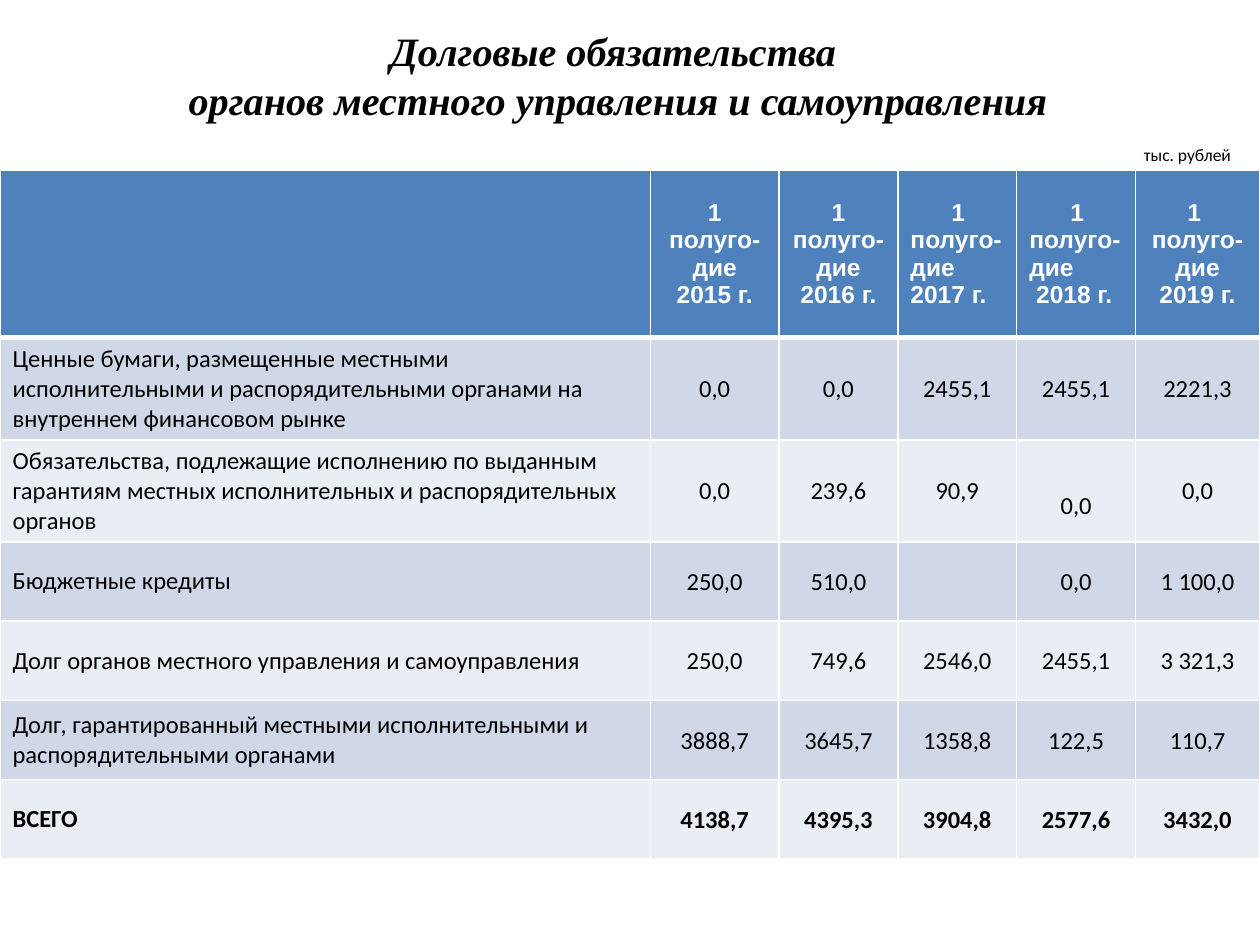
from dataclasses import dataclass
from typing import Any

from lxml.etree import SubElement
from pptx import Presentation
from pptx.dml.color import RGBColor
from pptx.enum.text import MSO_ANCHOR, PP_ALIGN
from pptx.oxml import parse_xml
from pptx.oxml.ns import nsdecls, qn
from pptx.util import Pt


@dataclass(frozen=True)
class Theme:
    header_fill: str = "4F81BD"
    band_fills: tuple[str, str] = ("D0D8E8", "E9EDF4")
    white: str = "FFFFFF"
    black: str = "000000"
    title_size: float = 23
    table_size: float = 14
    unit_size: float = 10
    body_font: str = "Calibri"
    header_font: str = "Arial"
    title_font: str = "Times New Roman"


@dataclass(frozen=True)
class Line:
    text: str
    indent: float = 0


@dataclass(frozen=True)
class Header:
    lines: tuple[Line, ...]
    align: PP_ALIGN = PP_ALIGN.CENTER


@dataclass(frozen=True)
class DebtRow:
    label: str
    values: tuple[str, ...]
    height: float
    tight: bool = True
    bold: bool = False


THEME = Theme()
STANDARD_MARGINS = (7.2, 3.6, 7.2, 3.6)
TIGHT_MARGINS = (0.72, 0.72, 0.72, 0)
LOWERED_MARGINS = (7.2, 20.6, 7.2, 3.6)
LOWERED_CELL = (2, 4)
COLUMN_WIDTHS = (371.6, 73.6, 67.9, 67.9, 67.9, 70.9)
HEADER_HEIGHT = 95.8
HALF_YEAR = "1 полуго-дие"

HEADERS = (
    Header(()),
    Header((Line(HALF_YEAR), Line("2015 г."))),
    Header((Line(HALF_YEAR), Line("2016 г."))),
    Header((Line(HALF_YEAR, 23.4), Line("2017 г.")), PP_ALIGN.LEFT),
    Header((Line(HALF_YEAR, 23.4), Line("2018 г.", 3.9)), PP_ALIGN.LEFT),
    Header((Line("1 "), Line("полуго-дие"), Line("2019 г."))),
)

DEBT_ROWS = (
    DebtRow("Ценные бумаги, размещенные местными исполнительными и "
            "распорядительными органами на внутреннем финансовом рынке",
            ("0,0", "0,0", "2455,1", "2455,1", "2221,3"), 57.6, tight=False),
    DebtRow("Обязательства, подлежащие исполнению по выданным гарантиям "
            "местных исполнительных и распорядительных органов",
            ("0,0", "239,6", "90,9", "0,0", "0,0"), 57.6, tight=False),
    DebtRow("Бюджетные кредиты",
            ("250,0", "510,0", "", "0,0", "1 100,0"), 45.3),
    DebtRow("Долг органов местного управления и самоуправления",
            ("250,0", "749,6", "2546,0", "2455,1", "3 321,3"), 45.3),
    DebtRow("Долг, гарантированный местными исполнительными и распорядительными органами",
            ("3888,7", "3645,7", "1358,8", "122,5", "110,7"), 45.3),
    DebtRow("ВСЕГО",
            ("4138,7", "4395,3", "3904,8", "2577,6", "3432,0"), 45.3, bold=True),
)


def font_format(name: str, size: float, **extra: Any) -> dict[str, Any]:
    return {"name": name, "size": Pt(size), **extra}


def write_lines(text_frame: Any, lines: tuple[Line, ...], align: PP_ALIGN,
                values: dict[str, Any], color: str) -> None:
    for index, line in enumerate(lines):
        paragraph = text_frame.paragraphs[0] if index == 0 else text_frame.add_paragraph()
        paragraph.text = line.text
        paragraph.alignment = align
        if line.indent:
            paragraph._p.get_or_add_pPr().set("indent", str(Pt(line.indent)))
        for run in paragraph.runs:
            for name, value in values.items():
                setattr(run.font, name, value)
            run.font.color.rgb = RGBColor.from_string(color)


def add_borders(cell: Any, bottom_width: float) -> None:
    properties = cell._tc.get_or_add_tcPr()
    widths = {"lnL": 1, "lnR": 1, "lnT": 1, "lnB": bottom_width}
    for index, (side, width) in enumerate(widths.items()):
        border = parse_xml(
            f'<a:{side} {nsdecls("a")} w="{Pt(width)}"><a:solidFill>'
            f'<a:srgbClr val="{THEME.white}"/></a:solidFill></a:{side}>')
        properties.insert(index, border)


def style_cell(cell: Any, fill: str, margins: tuple[float, ...], bottom_width: float = 1) -> None:
    cell.fill.solid()
    cell.fill.fore_color.rgb = RGBColor.from_string(fill)
    cell.vertical_anchor = MSO_ANCHOR.MIDDLE
    for side, margin in zip(("left", "top", "right", "bottom"), margins):
        setattr(cell, f"margin_{side}", Pt(margin))
    add_borders(cell, bottom_width)


def add_debt_table(slide: Any) -> None:
    heights = (HEADER_HEIGHT, *(row.height for row in DEBT_ROWS))
    table = slide.shapes.add_table(
        len(heights), len(COLUMN_WIDTHS), Pt(0), Pt(97.2),
        Pt(sum(COLUMN_WIDTHS)), Pt(sum(heights))).table
    for column, width in zip(table.columns, COLUMN_WIDTHS):
        column.width = Pt(width)
    for row, height in zip(table.rows, heights):
        row.height = Pt(height)

    header_format = font_format(THEME.header_font, THEME.table_size, bold=True)
    for column_index, header in enumerate(HEADERS):
        cell = table.cell(0, column_index)
        style_cell(cell, THEME.header_fill, STANDARD_MARGINS, 3)
        write_lines(cell.text_frame, header.lines, header.align, header_format, THEME.white)

    for row_index, row in enumerate(DEBT_ROWS, start=1):
        fill = THEME.band_fills[(row_index - 1) % 2]
        body_format = font_format(THEME.body_font, THEME.table_size, bold=row.bold)
        for column_index, text in enumerate((row.label, *row.values)):
            cell = table.cell(row_index, column_index)
            is_value = column_index > 0
            margins = TIGHT_MARGINS if row.tight and is_value else STANDARD_MARGINS
            if (row_index, column_index) == LOWERED_CELL:
                margins = LOWERED_MARGINS
            style_cell(cell, fill, margins)
            align = PP_ALIGN.CENTER if is_value else PP_ALIGN.LEFT
            write_lines(cell.text_frame, (Line(text),), align, body_format, THEME.black)


def add_text(slide: Any, box: tuple[float, ...], text: str, align: PP_ALIGN,
             anchor: MSO_ANCHOR, values: dict[str, Any], wrap: bool) -> Any:
    shape = slide.shapes.add_textbox(*(Pt(length) for length in box))
    shape.text_frame.word_wrap = wrap
    shape.text_frame.vertical_anchor = anchor
    write_lines(shape.text_frame, (Line(text),), align, values, THEME.black)
    return shape


def outline_text(shape: Any, width: float, color: str) -> None:
    for run in shape.text_frame.paragraphs[0].runs:
        outline = parse_xml(f'<a:ln {nsdecls("a")} w="{Pt(width)}"/>')
        fill = SubElement(outline, qn("a:solidFill"))
        SubElement(fill, qn("a:srgbClr"), val=color)
        run._r.get_or_add_rPr().insert(0, outline)


def main() -> None:
    presentation = Presentation()
    presentation.slide_width = Pt(720)
    presentation.slide_height = Pt(540)
    slide = presentation.slides.add_slide(presentation.slide_layouts[6])
    add_debt_table(slide)
    title = add_text(
        slide, (29.5, -2.2, 648, 90),
        "Долговые обязательства \vорганов местного управления и самоуправления",
        PP_ALIGN.CENTER, MSO_ANCHOR.MIDDLE,
        font_format(THEME.title_font, THEME.title_size, bold=True, italic=True), True)
    outline_text(title, 0.75, THEME.black)
    add_text(slide, (646.6, 78.5, 64.8, 19.4), "тыс. рублей", PP_ALIGN.LEFT,
             MSO_ANCHOR.TOP, font_format(THEME.body_font, THEME.unit_size), False)
    presentation.save("out.pptx")


if __name__ == "__main__":
    main()
